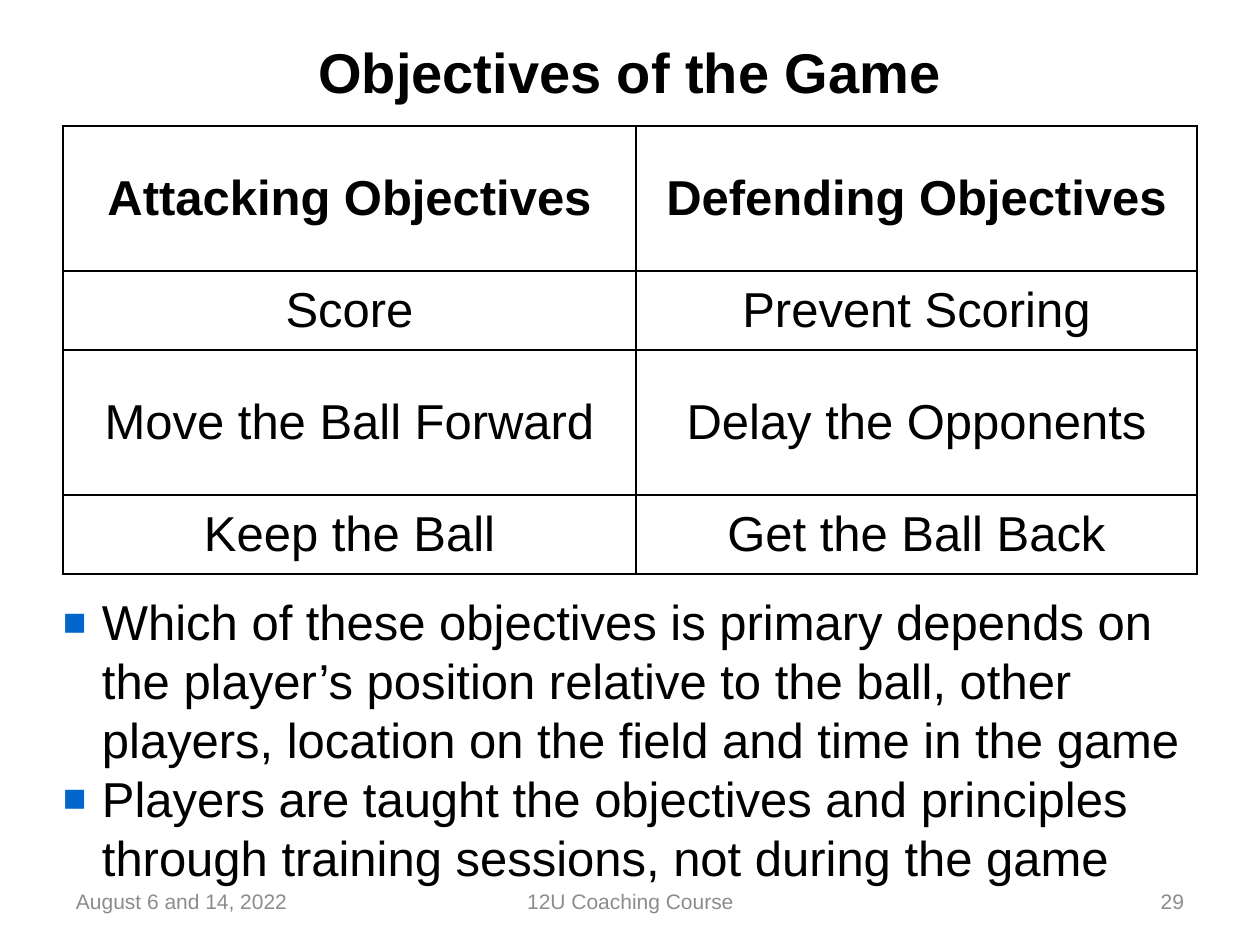
import pptx
import pptx.util
import pptx.dml.color
import pptx.enum.text
import pptx.oxml.ns
from lxml import etree

Pt = pptx.util.Pt
ALIGN = pptx.enum.text.PP_ALIGN
MID = pptx.enum.text.MSO_ANCHOR.MIDDLE
TOP = pptx.enum.text.MSO_ANCHOR.TOP
BLACK, GREY, BLUE = "000000", "8C8C8C", "0066CC"
GOALS = [
    ("Attacking Objectives", "Defending Objectives"),
    ("Score", "Prevent Scoring"),
    ("Move the Ball Forward", "Delay the Opponents"),
    ("Keep the Ball", "Get the Ball Back"),
]
NOTES = [
    "Which of these objectives is primary depends on the player’s position "
    "relative to the ball, other players, location on the field and time in the game",
    "Players are taught the objectives and principles through training "
    "sessions, not during the game",
]


def px(n):
    return pptx.util.Emu(round(n * 914400 / 126))


def color(code):
    return pptx.dml.color.RGBColor.from_string(code)


def sub(node, tag, **attrs):
    return etree.SubElement(node, pptx.oxml.ns.qn(tag), attrs)


def style(para, size, code=BLACK, bold=False, align=ALIGN.LEFT):
    para.alignment = align
    font = para.font
    font.name, font.size, font.bold = "Arial", Pt(size), bold
    font.color.rgb = color(code)


def add_box(slide, at, anchor=MID, side=0, edge=0):
    frame = slide.shapes.add_textbox(*map(px, at)).text_frame
    frame.word_wrap = True
    frame.vertical_anchor = anchor
    frame.margin_left = frame.margin_right = px(side)
    frame.margin_top = frame.margin_bottom = px(edge)
    return frame


def add_line(slide, at, text, size, code=BLACK, bold=False,
             align=ALIGN.LEFT, side=0, edge=0):
    para = add_box(slide, at, MID, side, edge).paragraphs[0]
    para.text = text
    style(para, size, code, bold, align)


def add_list(slide, at, items):
    frame = add_box(slide, at, TOP)
    for i, item in enumerate(items):
        para = frame.add_paragraph() if i else frame.paragraphs[0]
        para.text = item
        props = para._p.get_or_add_pPr()
        props.set("marL", str(px(39)))
        props.set("indent", str(-px(39)))
        sub(sub(props, "a:buClr"), "a:srgbClr", val=BLUE)
        sub(props, "a:buSzPct", val="80000")
        sub(props, "a:buFont", typeface="Arial")
        sub(props, "a:buChar", char="■")
        style(para, 28)


def set_edges(cell, widths):
    props = cell._tc.get_or_add_tcPr()
    for i, (side, width) in enumerate(zip("LRTB", widths)):
        line = etree.Element(pptx.oxml.ns.qn("a:ln" + side), w=str(Pt(width)))
        sub(sub(line, "a:solidFill"), "a:srgbClr", val=BLACK)
        props.insert(i, line)


def add_grid(slide, at, rows, wide, high):
    table = slide.shapes.add_table(len(rows), len(wide), *map(px, at)).table
    table.first_row = table.horz_banding = False
    for col, width in zip(table.columns, wide):
        col.width = px(width)
    last = len(rows) - 1
    for r, texts in enumerate(rows):
        table.rows[r].height = px(high[r])
        for c, text in enumerate(texts):
            cell = table.cell(r, c)
            cell.fill.background()
            cell.vertical_anchor = MID
            cell.margin_left = cell.margin_right = px(14)
            cell.margin_top = cell.margin_bottom = px(6)
            para = cell.text_frame.paragraphs[0]
            para.text = text
            style(para, 28, bold=r == 0, align=ALIGN.CENTER)
            # Heavy lines outside and under the header, thin lines between
            heavy = (c == 0, c == len(texts) - 1, r < 2, r in (0, last))
            set_edges(cell, [1.5 if h else 1 for h in heavy])


def main():
    deck = pptx.Presentation()
    deck.slide_width, deck.slide_height = px(1260), px(945)
    slide = deck.slides.add_slide(deck.slide_layouts[6])

    # Title and table of objectives
    add_line(slide, (63, 38, 1134, 67), "Objectives of the Game", 32,
             bold=True, align=ALIGN.CENTER)
    add_grid(slide, (63, 126, 1134, 448), GOALS, (573, 561), (145, 79, 145, 79))

    # Footer
    for left, width, text, align in [
        (63, 294, "August 6 and 14, 2022", ALIGN.LEFT),
        (431, 399, "12U Coaching Course", ALIGN.CENTER),
        (903, 294, "29", ALIGN.RIGHT),
    ]:
        add_line(slide, (left, 876, width, 50), text, 12, GREY,
                 align=align, side=13, edge=6)

    # Coaching notes
    add_list(slide, (63, 592, 1134, 280), NOTES)

    deck.save("out.pptx")


if __name__ == "__main__":
    main()
